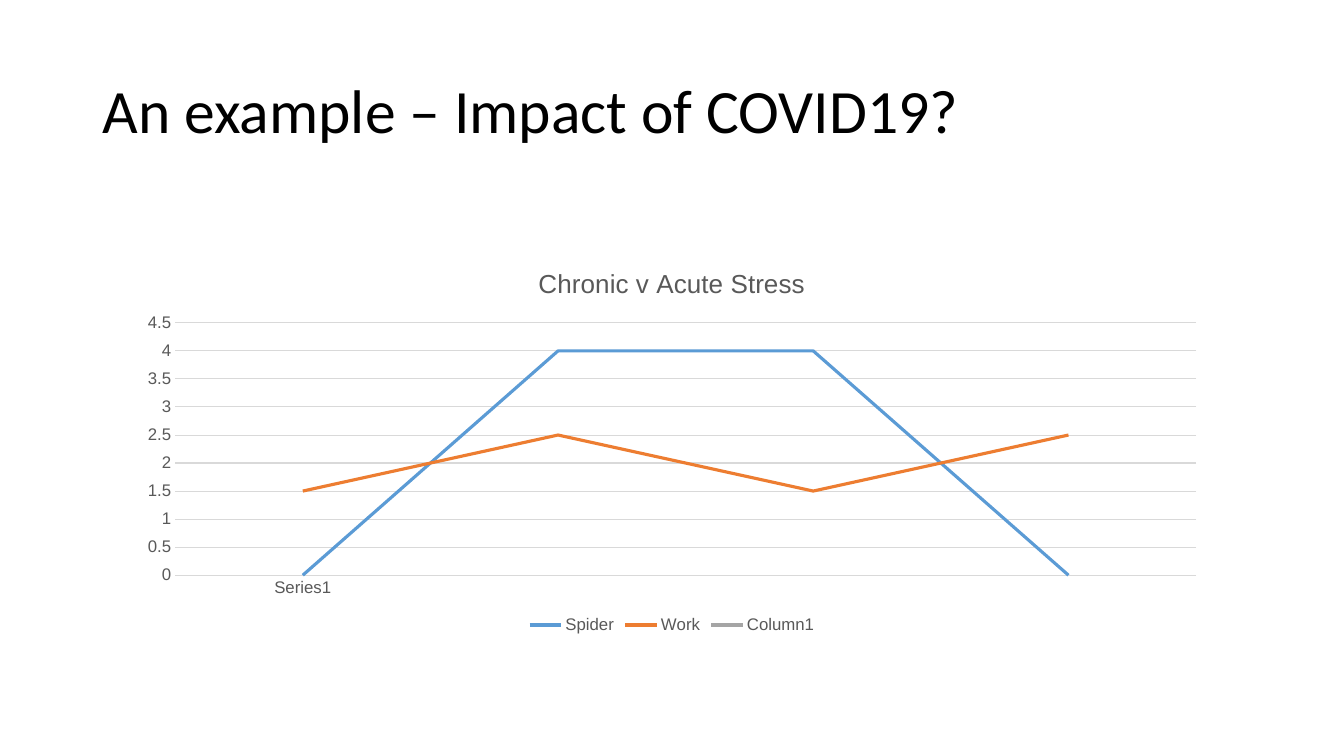
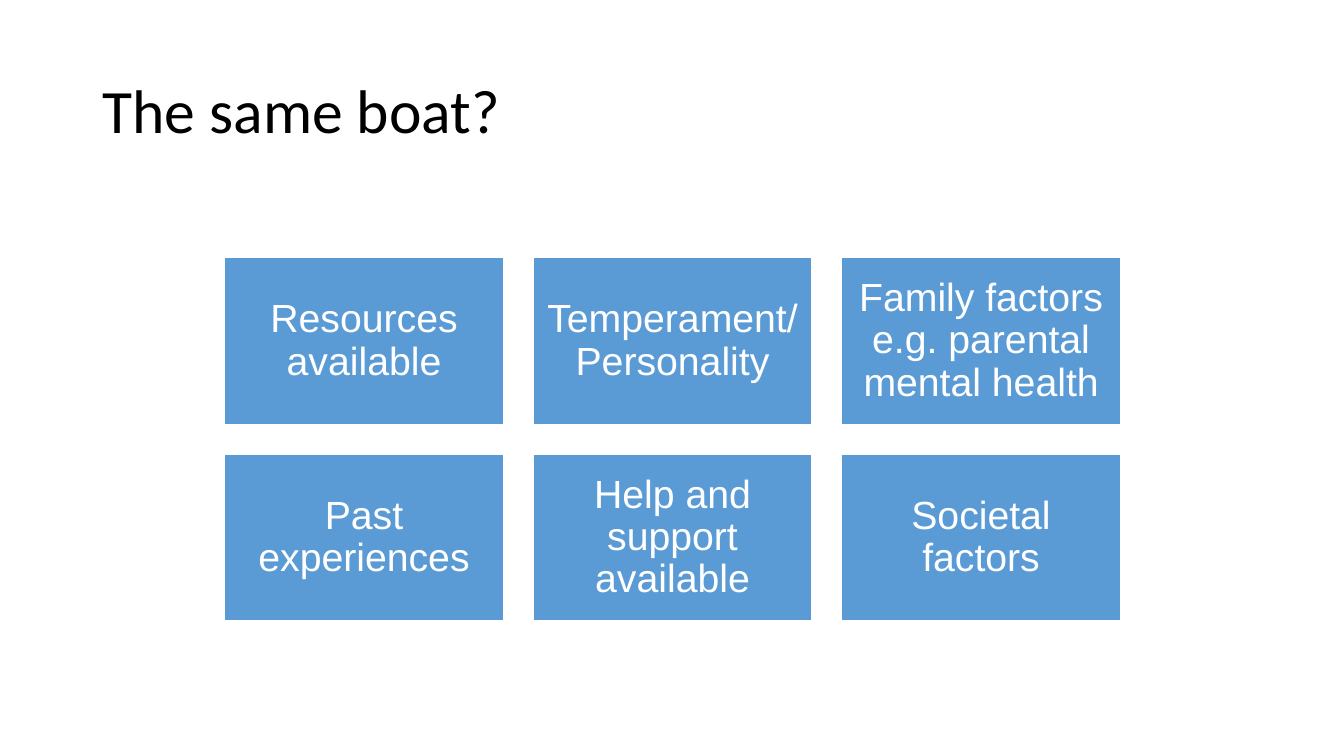
"""Two slides on stress: a line chart and a grid of factors."""
from pptx import Presentation
from pptx.chart.data import CategoryChartData
from pptx.dml.color import RGBColor
from pptx.enum import chart as chart_enum, shapes, text
from pptx.util import Inches, Pt

COLOURS = {
    "black": "000000", "white": "FFFFFF", "grey text": "595959", "grid": "D9D9D9",
    "blue": "5B9BD5", "orange": "ED7D31", "grey": "A5A5A5",
}
CHART_SLIDE_TITLE = "An example – Impact of COVID19?"
CHART_TITLE = "Chronic v Acute Stress"
CATEGORIES = ["Series1", "", "", ""]
SERIES = [
    ("Spider", (0, 4, 4, 0), "blue"),
    ("Work", (1.5, 2.5, 1.5, 2.5), "orange"),
    ("Column1", (None, None, None, None), "grey"),
]
FACTORS_SLIDE_TITLE = "The same boat?"
FACTORS = [
    "Resources available", "Temperament/ Personality",
    "Family factors e.g. parental mental health",
    "Past experiences", "Help and support available", "Societal factors",
]
COLUMNS = 3
GRID_LEFT, GRID_TOP = 2.22, 2.55
BOX_WIDTH, BOX_HEIGHT, GAP = 2.78, 1.67, 0.28


def colour(name):
    return RGBColor.from_string(COLOURS[name])


def style_font(font, name, size, colour_name):
    font.name = name
    font.size = Pt(size)
    font.bold = False
    font.color.rgb = colour(colour_name)


def style_line(line, colour_name, width):
    line.color.rgb = colour(colour_name)
    line.width = Pt(width)


def write(shape, content, font_name, size, colour_name, alignment):
    frame = shape.text_frame
    frame.word_wrap = True
    frame.vertical_anchor = text.MSO_ANCHOR.MIDDLE
    paragraph = frame.paragraphs[0]
    paragraph.text = content
    paragraph.alignment = alignment
    paragraph.line_spacing = 0.9
    style_font(paragraph.font, font_name, size, colour_name)
    return frame


def add_titled_slide(presentation, title):
    slide = presentation.slides.add_slide(presentation.slide_layouts[6])
    box = slide.shapes.add_textbox(Inches(0.92), Inches(0.4), Inches(11.5), Inches(1.45))
    write(box, title, "Calibri", 44, "black", text.PP_ALIGN.LEFT)
    return slide


def add_stress_chart(slide):
    data = CategoryChartData()
    data.categories = CATEGORIES
    for name, values, _ in SERIES:
        data.add_series(name, values)
    chart = slide.shapes.add_chart(
        chart_enum.XL_CHART_TYPE.LINE, Inches(1.25), Inches(2.46),
        Inches(10.83), Inches(3.87), data).chart
    style_font(chart.font, "Arial", 12, "grey text")

    chart.has_title = True
    title = chart.chart_title
    title.include_in_layout = False
    title.text_frame.text = CHART_TITLE
    style_font(title.text_frame.paragraphs[0].font, "Arial", 18.6, "grey text")

    chart.has_legend = True
    chart.legend.position = chart_enum.XL_LEGEND_POSITION.BOTTOM
    chart.legend.include_in_layout = False
    style_font(chart.legend.font, "Arial", 12, "grey text")

    for axis in (chart.category_axis, chart.value_axis):
        axis.major_tick_mark = chart_enum.XL_TICK_MARK.NONE
        axis.minor_tick_mark = chart_enum.XL_TICK_MARK.NONE
        style_font(axis.tick_labels.font, "Arial", 12, "grey text")
    style_line(chart.category_axis.format.line, "grid", 0.75)
    value_axis = chart.value_axis
    value_axis.minimum_scale, value_axis.maximum_scale = 0, 4.5
    value_axis.major_unit = 0.5
    value_axis.format.line.fill.background()
    style_line(value_axis.major_gridlines.format.line, "grid", 0.75)

    plot = chart.plots[0]
    plot.vary_by_categories = False
    for series, (_, _, colour_name) in zip(plot.series, SERIES):
        series.smooth = False
        series.marker.style = chart_enum.XL_MARKER_STYLE.NONE
        style_line(series.format.line, colour_name, 2.25)


def add_factor_grid(slide):
    for index, factor in enumerate(FACTORS):
        row, column = divmod(index, COLUMNS)
        box = slide.shapes.add_shape(
            shapes.MSO_SHAPE.RECTANGLE,
            Inches(GRID_LEFT + column * (BOX_WIDTH + GAP)),
            Inches(GRID_TOP + row * (BOX_HEIGHT + GAP)),
            Inches(BOX_WIDTH), Inches(BOX_HEIGHT))
        box.shadow.inherit = False
        box.fill.solid()
        box.fill.fore_color.rgb = colour("blue")
        style_line(box.line, "white", 2)
        frame = write(box, factor, "Arial", 28, "white", text.PP_ALIGN.CENTER)
        frame.margin_left = frame.margin_right = Inches(0.12)
        frame.margin_top = frame.margin_bottom = Inches(0.12)


def main():
    presentation = Presentation()
    presentation.slide_width, presentation.slide_height = Inches(13.33), Inches(7.5)
    add_stress_chart(add_titled_slide(presentation, CHART_SLIDE_TITLE))
    add_factor_grid(add_titled_slide(presentation, FACTORS_SLIDE_TITLE))
    presentation.save("out.pptx")


if __name__ == "__main__":
    main()
